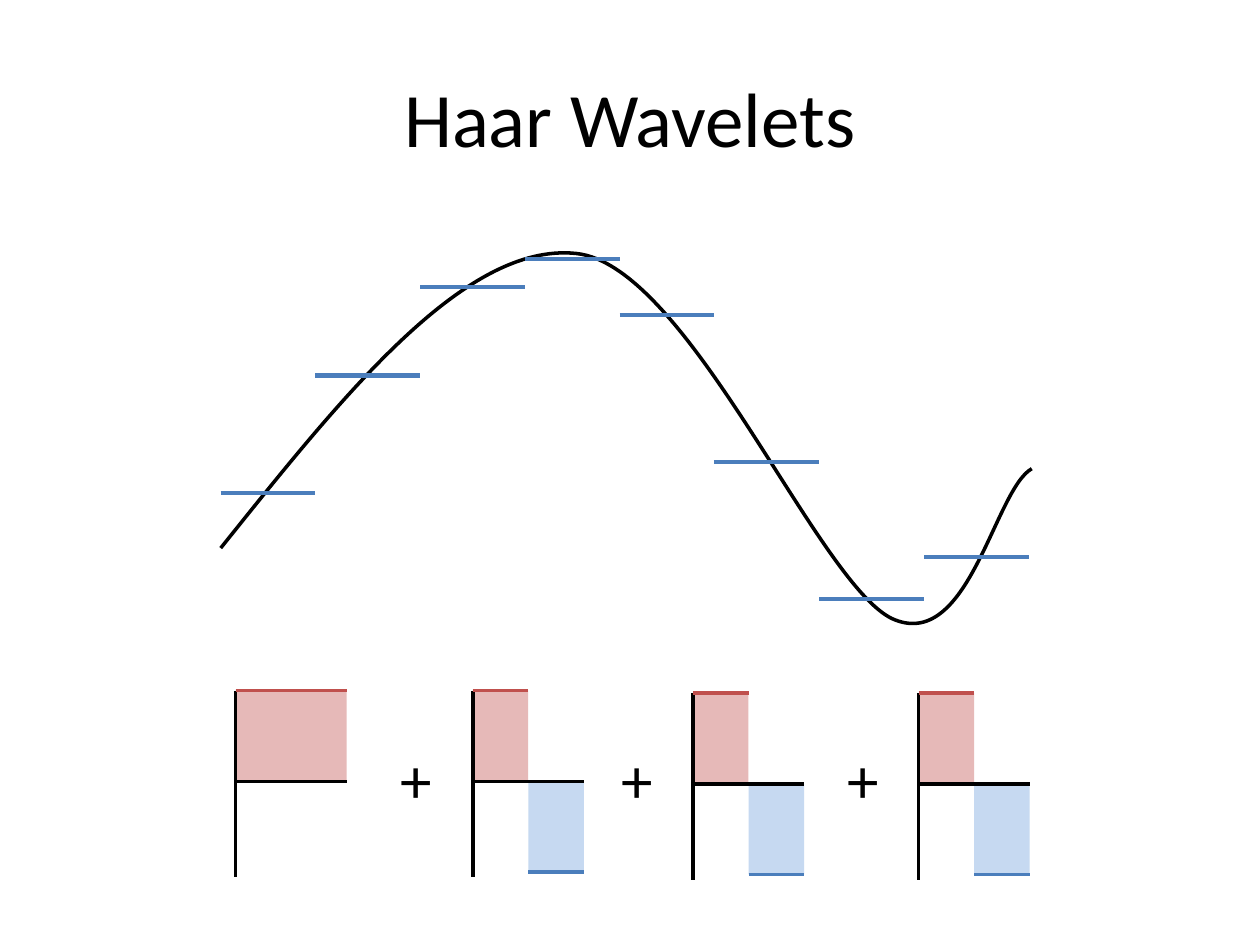
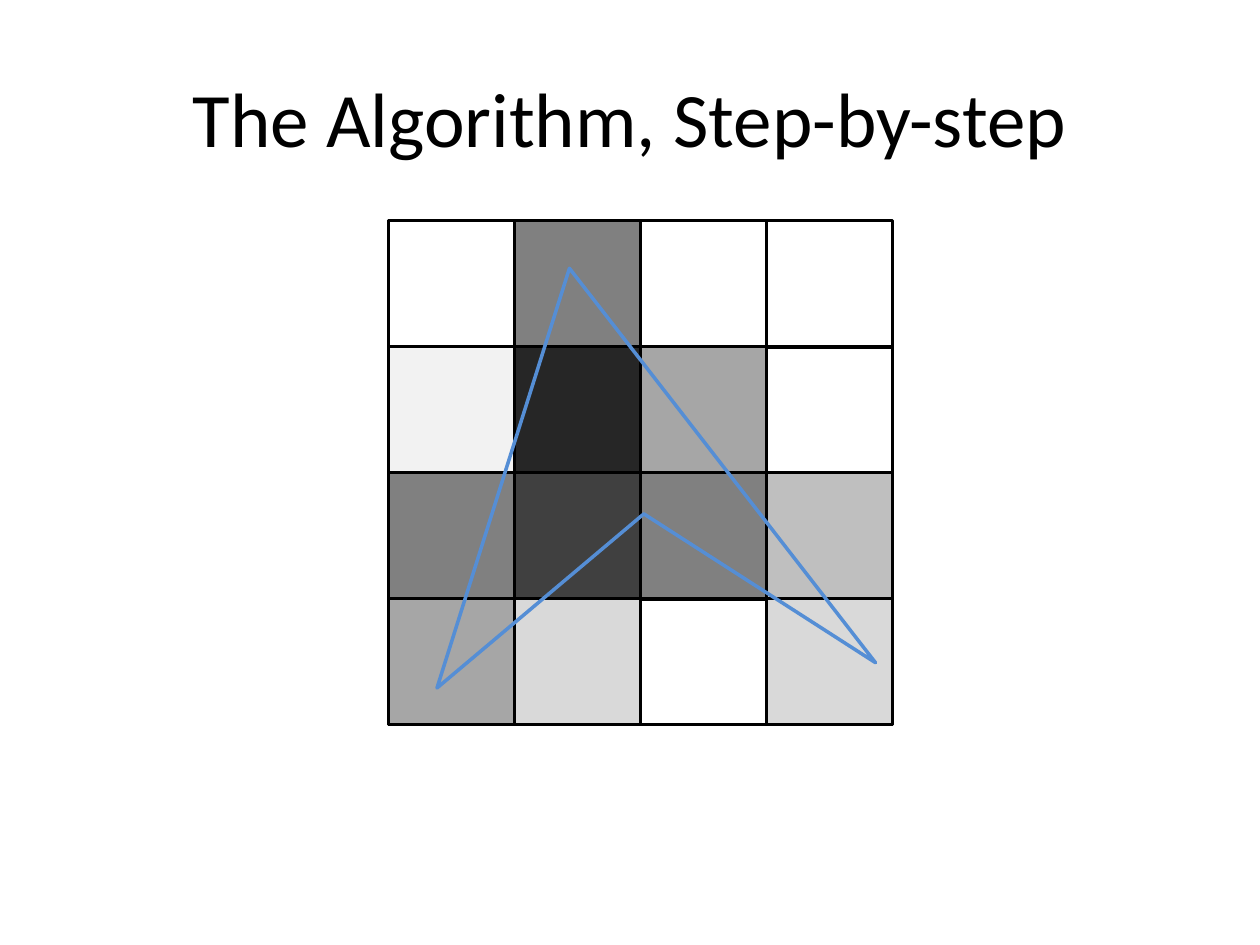
from dataclasses import dataclass
from itertools import pairwise, product
from typing import NamedTuple

from lxml.etree import SubElement
from pptx import Presentation
from pptx.dml.color import RGBColor
from pptx.enum.shapes import MSO_CONNECTOR, MSO_SHAPE
from pptx.enum.text import MSO_ANCHOR, MSO_AUTO_SIZE, PP_ALIGN
from pptx.oxml.ns import qn
from pptx.shapes.autoshape import Shape
from pptx.shapes.connector import Connector
from pptx.slide import Slide
from pptx.util import Cm, Pt


@dataclass(frozen=True)
class Theme:
    font: str = "Calibri"
    black: str = "000000"
    blue: str = "4B7EBC"
    pale_blue: str = "C6D9F1"
    red: str = "C0504D"
    pale_red: str = "E6B9B8"
    outline_blue: str = "558ED5"
    title_size: float = 44
    operator_size: float = 36
    line_width: float = 2
    step_width: float = 2.5


THEME = Theme()


class Point(NamedTuple):
    x: float
    y: float


class Box(NamedTuple):
    left: float
    top: float
    width: float
    height: float

    def lengths(self) -> list[Cm]:
        return [Cm(value) for value in self]


class Wavelet(NamedTuple):
    left: float
    top: float
    has_negative_half: bool = True


TITLE_BOX = Box(1.27, 0.76, 22.86, 3.18)

# One start point, then three points for each Bézier segment.
CURVE = [
    Point(4.45, 11.05),
    Point(6.91, 7.98), Point(9.37, 4.88), Point(11.61, 5.11),
    Point(13.87, 5.33), Point(16.46, 11.73), Point(17.98, 12.47),
    Point(19.53, 13.18), Point(20.04, 9.88), Point(20.8, 9.45),
]
STEP_EDGES = [4.45, 6.35, 8.47, 10.58, 12.49, 14.39, 16.51, 18.63, 20.74]
STEP_HEIGHTS = [9.94, 7.57, 5.79, 5.22, 6.35, 9.31, 12.07, 11.23]

WAVELETS = [
    Wavelet(4.75, 13.92, has_negative_half=False),
    Wavelet(9.53, 13.92),
    Wavelet(13.97, 13.97),
    Wavelet(18.52, 13.97),
]
HALF_WIDTH, HALF_HEIGHT, AXIS_HEIGHT = 1.12, 1.83, 3.76
PLUS_LEFTS = [7.82, 12.27, 16.84]

GRID_ORIGIN = Point(7.83, 4.45)
CELL = 2.54
GRID_COUNT = 4
COVERAGE = [
    [None, "808080", None, None],
    ["F2F2F2", "262626", "A6A6A6", None],
    ["808080", "404040", "808080", "BFBFBF"],
    ["A6A6A6", "D9D9D9", None, "D9D9D9"],
]
ARROW_OUTLINE = [Point(11.48, 5.41), Point(8.81, 13.87), Point(12.98, 10.36), Point(17.65, 13.36)]


def style_shape(shape: Shape, fill: str | None = None, line: str | None = None) -> None:
    shape.shadow.inherit = False
    if fill:
        shape.fill.solid()
        shape.fill.fore_color.rgb = RGBColor.from_string(fill)
    else:
        shape.fill.background()
    if line:
        shape.line.color.rgb = RGBColor.from_string(line)
        shape.line.width = Pt(THEME.line_width)
    else:
        shape.line.fill.background()


def add_rectangle(shapes, box: Box, fill: str | None = None, line: str | None = None) -> Shape:
    shape = shapes.add_shape(MSO_SHAPE.RECTANGLE, *box.lengths())
    style_shape(shape, fill, line)
    return shape


def add_line(shapes, start: Point, end: Point, color: str = THEME.black,
             width: float = THEME.line_width) -> Connector:
    ends = [Cm(value) for value in (*start, *end)]
    connector = shapes.add_connector(MSO_CONNECTOR.STRAIGHT, *ends)
    connector.line.color.rgb = RGBColor.from_string(color)
    connector.line.width = Pt(width)
    SubElement(connector.element.spPr, qn("a:effectLst"))
    return connector


def add_text(slide: Slide, text: str, box: Box, *, size: float, wrap: bool = True,
             align: PP_ALIGN = PP_ALIGN.LEFT, anchor: MSO_ANCHOR = MSO_ANCHOR.TOP,
             auto_size: MSO_AUTO_SIZE = MSO_AUTO_SIZE.NONE) -> None:
    frame = slide.shapes.add_textbox(*box.lengths()).text_frame
    frame.word_wrap = wrap
    frame.auto_size = auto_size
    frame.vertical_anchor = anchor
    paragraph = frame.paragraphs[0]
    paragraph.alignment = align
    run = paragraph.add_run()
    run.text = text
    run.font.name = THEME.font
    run.font.size = Pt(size)
    run.font.color.rgb = RGBColor.from_string(THEME.black)


def add_outline(slide: Slide, points: list[Point], color: str, close: bool) -> Shape:
    first, *others = [(Cm(point.x), Cm(point.y)) for point in points]
    builder = slide.shapes.build_freeform(*first)
    builder.add_line_segments(others, close=close)
    shape = builder.convert_to_shape()
    style_shape(shape, line=color)
    return shape


def add_curve(slide: Slide, points: list[Point], color: str) -> None:
    """Draw an outline and merge each three of its segments into one cubic."""
    shape = add_outline(slide, points, color, close=False)
    segments = list(shape.element.iter(qn("a:lnTo")))
    for index in range(0, len(segments), 3):
        cubic, *merged = segments[index:index + 3]
        cubic.tag = qn("a:cubicBezTo")
        for segment in merged:
            cubic.append(segment[0])
            segment.getparent().remove(segment)


def add_titled_slide(presentation, title: str) -> Slide:
    slide = presentation.slides.add_slide(presentation.slide_layouts[6])
    add_text(slide, title, TITLE_BOX, size=THEME.title_size,
             align=PP_ALIGN.CENTER, anchor=MSO_ANCHOR.MIDDLE)
    return slide


def add_wavelet(slide: Slide, wavelet: Wavelet) -> None:
    shapes = slide.shapes.add_group_shape().shapes
    left, top, has_negative_half = wavelet
    middle, right = left + HALF_WIDTH, left + 2 * HALF_WIDTH
    baseline, bottom = top + HALF_HEIGHT, top + 2 * HALF_HEIGHT
    positive_end = middle if has_negative_half else right

    if has_negative_half:
        add_rectangle(shapes, Box(middle, baseline, HALF_WIDTH, HALF_HEIGHT), THEME.pale_blue)
    add_rectangle(shapes, Box(left, top, positive_end - left, HALF_HEIGHT), THEME.pale_red)
    add_line(shapes, Point(left, baseline), Point(right, baseline))
    add_line(shapes, Point(left, top), Point(left, top + AXIS_HEIGHT))
    add_line(shapes, Point(left, top), Point(positive_end, top), THEME.red)
    if has_negative_half:
        add_line(shapes, Point(middle, bottom), Point(right, bottom), THEME.blue)


def grid_point(column: int, row: int) -> Point:
    return Point(GRID_ORIGIN.x + column * CELL, GRID_ORIGIN.y + row * CELL)


def add_grid(slide: Slide) -> None:
    shapes = slide.shapes
    side, half = GRID_COUNT * CELL, GRID_COUNT // 2
    frame = add_rectangle(shapes, Box(*GRID_ORIGIN, side, side), line=THEME.black)

    vertical = add_line(shapes, grid_point(half, 0), grid_point(half, GRID_COUNT))
    horizontal = add_line(shapes, grid_point(0, half), grid_point(GRID_COUNT, half))
    for connector, begin_site, end_site in ((vertical, 0, 2), (horizontal, 1, 3)):
        connector.begin_connect(frame, begin_site)
        connector.end_connect(frame, end_site)

    # Each quadrant is split again by its own cross.
    for offset, start in product((1, 3), (0, half)):
        add_line(shapes, grid_point(offset, start), grid_point(offset, start + half))
        add_line(shapes, grid_point(start, offset), grid_point(start + half, offset))

    for row, shades in enumerate(COVERAGE):
        for column, shade in enumerate(shades):
            if shade:
                add_rectangle(shapes, Box(*grid_point(column, row), CELL, CELL), shade, THEME.black)


def build_haar_slide(presentation) -> None:
    slide = add_titled_slide(presentation, "Haar Wavelets")
    add_curve(slide, CURVE, THEME.black)
    for (left, right), height in zip(pairwise(STEP_EDGES), STEP_HEIGHTS):
        add_line(slide.shapes, Point(left, height), Point(right, height),
                 THEME.blue, THEME.step_width)
    for wavelet in WAVELETS:
        add_wavelet(slide, wavelet)
    for left in PLUS_LEFTS:
        add_text(slide, "+", Box(left, 14.81, 1.14, 1.8), size=THEME.operator_size,
                 wrap=False, auto_size=MSO_AUTO_SIZE.SHAPE_TO_FIT_TEXT)


def build_algorithm_slide(presentation) -> None:
    slide = add_titled_slide(presentation, "The Algorithm, Step-by-step")
    add_grid(slide)
    add_outline(slide, ARROW_OUTLINE, THEME.outline_blue, close=True)


def main() -> None:
    presentation = Presentation()
    presentation.slide_width = Cm(25.4)
    presentation.slide_height = Cm(19.05)
    build_haar_slide(presentation)
    build_algorithm_slide(presentation)
    presentation.save("out.pptx")


if __name__ == "__main__":
    main()
